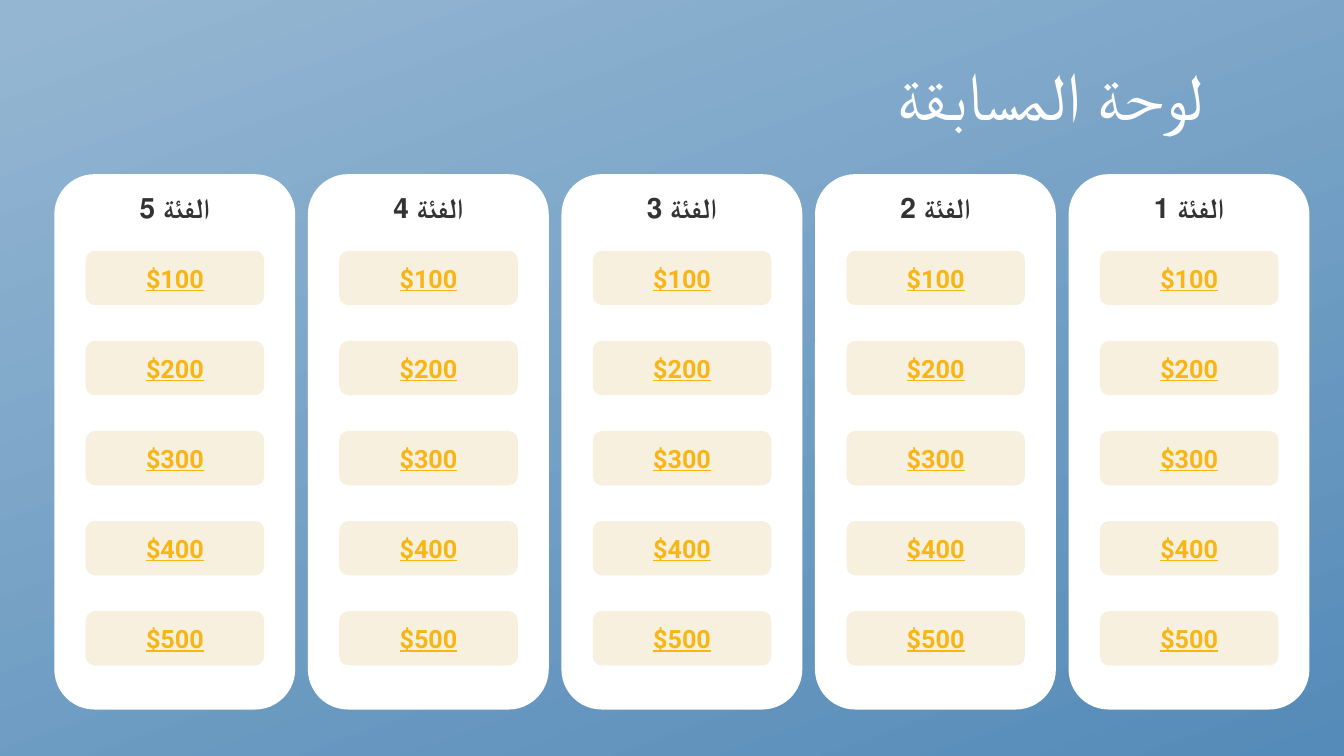
from pptx import Presentation
from pptx.dml.color import RGBColor
from pptx.enum.shapes import MSO_SHAPE
from pptx.enum.text import MSO_ANCHOR, PP_ALIGN
from pptx.util import Cm, Pt

ROUNDED = MSO_SHAPE.FLOWCHART_ALTERNATE_PROCESS
TOP, MIDDLE = MSO_ANCHOR.TOP, MSO_ANCHOR.MIDDLE
CENTER, RIGHT = PP_ALIGN.CENTER, PP_ALIGN.RIGHT

WHITE = RGBColor(0xFF, 0xFF, 0xFF)
SKY = RGBColor(0x94, 0xB6, 0xD2)
STEEL = RGBColor(0x55, 0x8B, 0xB8)
CHARCOAL = RGBColor(0x33, 0x33, 0x33)
CREAM = RGBColor(0xF7, 0xF0, 0xDE)
AMBER = RGBColor(0xF7, 0xB6, 0x15)

CATEGORIES = 5
PRIZES = (100, 200, 300, 400, 500)

# Board grid, in centimetres
BOARD_LEFT, CARD_TOP = 1.37, 4.39
CARD_WIDTH, CARD_HEIGHT, CARD_STEP = 6.07, 13.49, 6.39
TILE_INDENT, TILE_TOP = 0.79, 6.32
TILE_WIDTH, TILE_HEIGHT, TILE_STEP = 4.5, 1.37, 2.27


class Board:
    title_font = "Open Sans"
    body_font = "Roboto"

    def __init__(self, page):
        self.page = page

    def background(self, start, end):
        fill = self.page.background.fill
        fill.gradient()
        fill.gradient_angle = 290
        for stop, color, position in zip(fill.gradient_stops, (start, end), (0.02, 1)):
            stop.color.rgb = color
            stop.position = position

    def label(self, shape, text, font, size, color, align, anchor, rtl=False):
        frame = shape.text_frame
        frame.word_wrap = True
        frame.vertical_anchor = anchor
        para = frame.paragraphs[0]
        para.text = text
        para.alignment = align
        para.font.name = font
        para.font.size = Pt(size)
        para.font.color.rgb = color
        if rtl:
            para._p.get_or_add_pPr().set("rtl", "1")
        return para

    def title(self, text, left, top, width, height):
        box = self.page.shapes.add_textbox(Cm(left), Cm(top), Cm(width), Cm(height))
        para = self.label(box, text, self.title_font, 48, WHITE, RIGHT, MIDDLE, rtl=True)
        para.line_spacing = 0.9

    def panel(self, left, top, width, height, color):
        shape = self.page.shapes.add_shape(ROUNDED, Cm(left), Cm(top), Cm(width), Cm(height))
        shape.shadow.inherit = False
        shape.fill.solid()
        shape.fill.fore_color.rgb = color
        shape.line.fill.background()
        return shape

    def card(self, text, left):
        shape = self.panel(left, CARD_TOP, CARD_WIDTH, CARD_HEIGHT, WHITE)
        para = self.label(shape, text, self.body_font, 20, CHARCOAL, CENTER, TOP, rtl=True)
        para.space_before = Pt(5.6)
        para.font.bold = True

    def tile(self, text, left, top):
        shape = self.panel(left, top, TILE_WIDTH, TILE_HEIGHT, CREAM)
        para = self.label(shape, text, self.body_font, 18, AMBER, CENTER, MIDDLE)
        para.font.bold = True
        para.font.underline = True


def main():
    deck = Presentation()
    deck.slide_width, deck.slide_height = Cm(33.87), Cm(19.05)
    board = Board(deck.slides.add_slide(deck.slide_layouts[6]))

    # Backdrop and title
    board.background(SKY, STEEL)
    board.title("لوحة المسابقة", BOARD_LEFT, 0.64, 29.21, 3.68)

    # Category cards, numbered from right to left, with their prize tiles
    for column in range(CATEGORIES):
        left = BOARD_LEFT + column * CARD_STEP
        board.card(f"الفئة {CATEGORIES - column}", left)
        for row, prize in enumerate(PRIZES):
            board.tile(f"${prize}", left + TILE_INDENT, TILE_TOP + row * TILE_STEP)

    deck.save("out.pptx")


if __name__ == "__main__":
    main()
